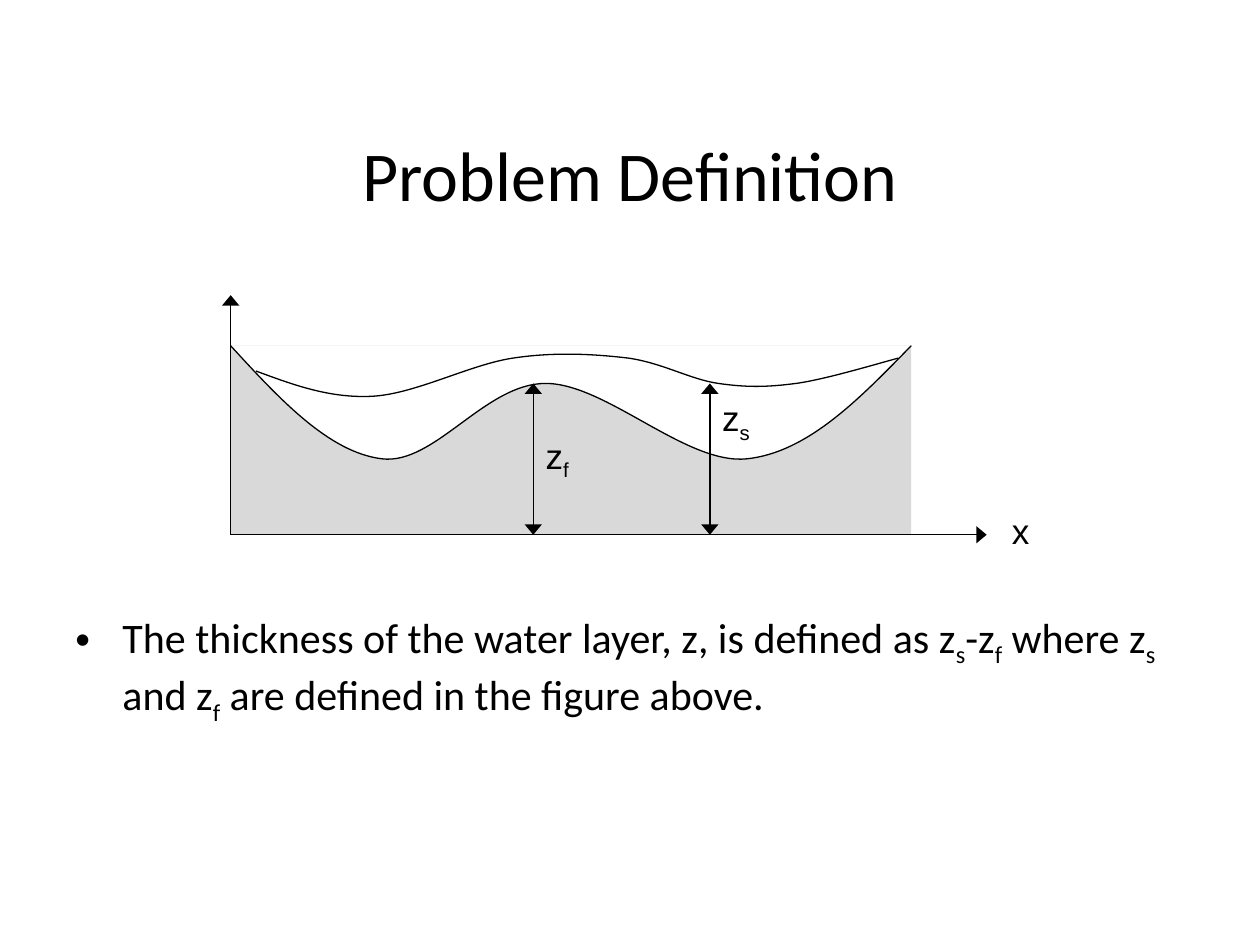
"""Build the slide that defines the thickness of a water layer."""
from lxml import etree
from pptx import Presentation
from pptx.dml.color import RGBColor
from pptx.enum.shapes import MSO_CONNECTOR, MSO_SHAPE
from pptx.enum.text import MSO_ANCHOR, PP_ALIGN
from pptx.oxml.ns import qn
from pptx.util import Cm, Pt

STRAIGHT = MSO_CONNECTOR.STRAIGHT
RECTANGLE = MSO_SHAPE.RECTANGLE
TOP, MIDDLE = MSO_ANCHOR.TOP, MSO_ANCHOR.MIDDLE
LEFT, CENTER = PP_ALIGN.LEFT, PP_ALIGN.CENTER

BLACK, WHITE, GREY = "000000", "FFFFFF", "D9D9D9"
AXIS_LEFT, AXIS_BASE = 4.65, 10.78
GROUND_TOP, GROUND_WIDTH = 6.97, 13.72
ARROW_TOP = 7.73
FLOOR_X, SURFACE_X = 10.75, 14.31
LABEL_GAP = 0.25

FLOOR = [
    (4.65, 6.97), (5.64, 8.05), (6.63, 9.12), (7.7, 9.25),
    (8.76, 9.38), (9.78, 7.73), (11, 7.73),
    (12.22, 7.73), (13.84, 9.38), (15.06, 9.25),
    (16.28, 9.12), (17.32, 8.05), (18.37, 6.97),
]
SURFACE = [
    (5.16, 7.48), (5.89, 7.75), (6.63, 8.03), (7.49, 7.99),
    (8.36, 7.95), (9.47, 7.35), (10.34, 7.22),
    (11.2, 7.09), (11.99, 7.14), (12.67, 7.22),
    (13.36, 7.32), (13.92, 7.65), (14.48, 7.73),
    (15.04, 7.81), (15.44, 7.81), (16.05, 7.73),
    (16.64, 7.65), (17.73, 7.32), (18.11, 7.22),
]


def color(value):
    return RGBColor.from_string(value)


def write(para, text, *, font="Calibri", size=24, ink=BLACK, align=LEFT):
    """Fill a paragraph, lowering each piece that stands between underscores."""
    para.alignment = align
    para.font.name, para.font.size = font, Pt(size)
    for index, piece in enumerate(text.split("_")):
        if not piece:
            continue
        span = para.add_run()
        span.text = piece
        span.font.name, span.font.size = font, Pt(size)
        span.font.color.rgb = color(ink)
        if index % 2:
            span._r.get_or_add_rPr().set("baseline", "-25000")


def bend(shape):
    """Turn each three line segments of a freeform into one cubic Bezier curve."""
    segments = list(shape._element.iter(qn("a:lnTo")))
    for first in range(0, len(segments), 3):
        curve, *others = segments[first:first + 3]
        curve.tag = qn("a:cubicBezTo")
        for other in others:
            curve.append(other[0])
            other.getparent().remove(other)


class Painter:
    """Holds the line style and the current page."""

    def __init__(self, page, ink=BLACK, weight=0.75):
        self.page, self.ink, self.weight = page, ink, weight

    def stroke(self, line):
        line.color.rgb = color(self.ink)
        line.width = Pt(self.weight)

    def text(self, x, y, width, height, text, *, anchor=TOP, bullet=None, **style):
        box = self.page.shapes.add_textbox(Cm(x), Cm(y), Cm(width), Cm(height))
        frame = box.text_frame
        frame.word_wrap, frame.vertical_anchor = True, anchor
        para = frame.paragraphs[0]
        if bullet:
            properties = para._p.get_or_add_pPr()
            properties.set("marL", str(Cm(0.95)))
            properties.set("indent", str(Cm(-0.95)))
            etree.SubElement(properties, qn("a:buFont")).set("typeface", "Arial")
            etree.SubElement(properties, qn("a:buChar")).set("char", bullet)
        write(para, text, **style)
        return frame

    def label(self, x, y, width, text):
        frame = self.text(x, y, width, 0.84, text, font="Arial", size=20)
        frame.word_wrap = False
        frame.margin_left = frame.margin_right = 0
        frame.margin_top = frame.margin_bottom = 0

    def block(self, x, y, width, height, fill):
        shape = self.page.shapes.add_shape(RECTANGLE, Cm(x), Cm(y), Cm(width), Cm(height))
        shape.shadow.inherit = False
        shape.fill.solid()
        shape.fill.fore_color.rgb = color(fill)
        shape.line.fill.background()

    def curve(self, points, fill=None):
        start, *rest = [(Cm(x), Cm(y)) for x, y in points]
        builder = self.page.shapes.build_freeform(*start)
        builder.add_line_segments(rest, close=False)
        shape = builder.convert_to_shape()
        bend(shape)
        shape.shadow.inherit = False
        if fill:
            shape.fill.solid()
            shape.fill.fore_color.rgb = color(fill)
        else:
            shape.fill.background()
        self.stroke(shape.line)

    def arrow(self, start, end, ends=("tailEnd",)):
        connector = self.page.shapes.add_connector(
            STRAIGHT, *(Cm(value) for value in (*start, *end)))
        self.stroke(connector.line)
        line = connector.line._get_or_add_ln()
        for end_name in ends:
            head = etree.SubElement(line, qn(f"a:{end_name}"))
            head.set("type", "triangle")
            head.set("w", "lg")
        etree.SubElement(connector._element.spPr, qn("a:effectLst"))

    def depth(self, x, label_y, width, text):
        self.arrow((x, ARROW_TOP), (x, AXIS_BASE), ("headEnd", "tailEnd"))
        self.label(x + LABEL_GAP, label_y, width, text)


def main():
    deck = Presentation()
    deck.slide_width, deck.slide_height = Cm(25.4), Cm(19.05)
    painter = Painter(deck.slides.add_slide(deck.slide_layouts[6]))

    painter.text(1.27, 1.9, 22.86, 3.18, "Problem Definition",
                 anchor=MIDDLE, size=40, align=CENTER)
    painter.text(1.27, 12.2, 22.86, 2.6,
                 "The thickness of the water layer, z, is defined as z_s_-z_f_"
                 " where z_s_ and z_f_ are defined in the figure above.", bullet="•")

    painter.block(AXIS_LEFT, GROUND_TOP, GROUND_WIDTH, AXIS_BASE - GROUND_TOP, GREY)
    painter.label(20.4, 10.28, 0.36, "x")
    painter.curve(FLOOR, WHITE)
    origin = (AXIS_LEFT, AXIS_BASE)
    painter.arrow(origin, (19.89, AXIS_BASE))
    painter.arrow(origin, (AXIS_LEFT, 5.95))
    painter.curve(SURFACE)
    painter.depth(FLOOR_X, 8.75, 0.48, "z_f_")
    painter.depth(SURFACE_X, 8, 0.58, "z_s_")

    deck.save("out.pptx")


if __name__ == "__main__":
    main()
